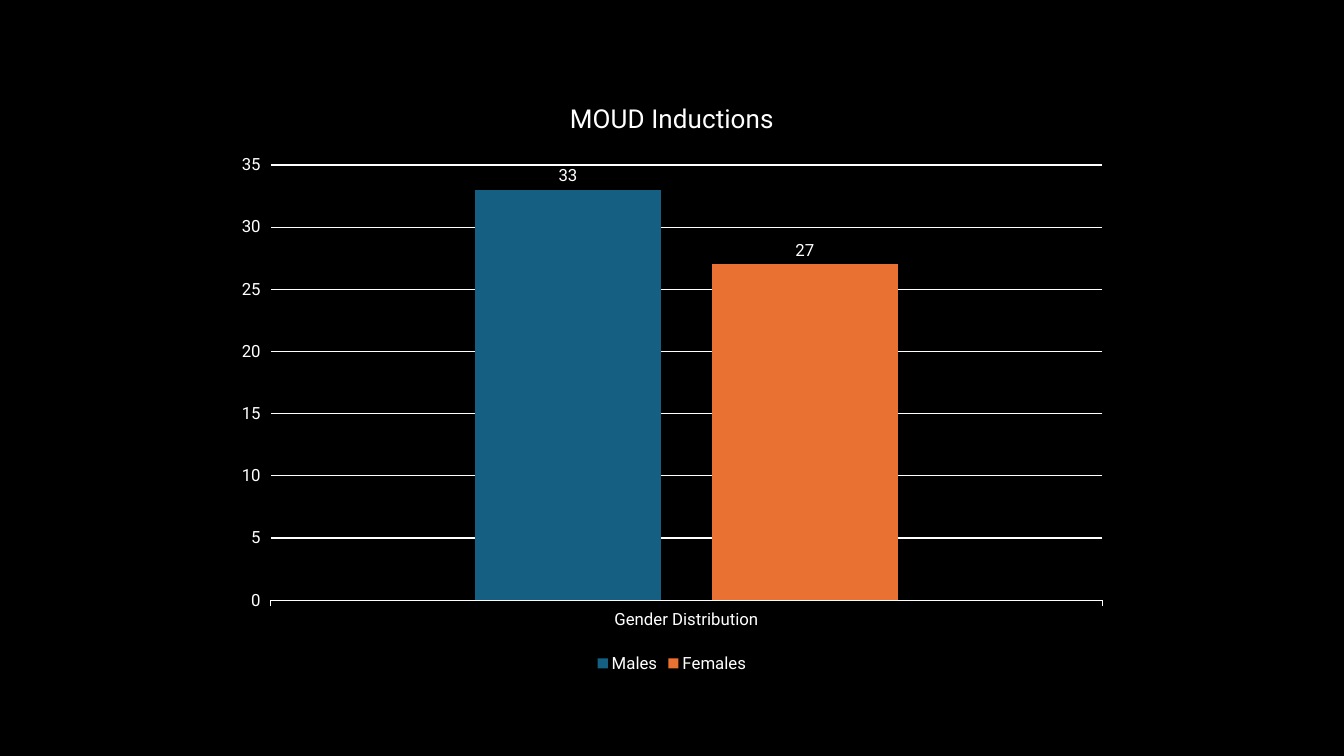
from typing import NamedTuple

from pptx import Presentation
from pptx.chart.chart import Chart
from pptx.chart.data import CategoryChartData
from pptx.dml.color import RGBColor
from pptx.enum.chart import XL_CHART_TYPE as Kind
from pptx.enum.chart import XL_LABEL_POSITION as LabelPos
from pptx.enum.chart import XL_LEGEND_POSITION as LegendPos
from pptx.enum.chart import XL_TICK_MARK as Tick
from pptx.slide import Slide
from pptx.text.text import Font
from pptx.util import Inches, Pt

BLACK = RGBColor(0x00, 0x00, 0x00)
WHITE = RGBColor(0xFF, 0xFF, 0xFF)
BLUE = RGBColor(0x15, 0x60, 0x82)
ORANGE = RGBColor(0xE9, 0x71, 0x32)


class Group(NamedTuple):
    name: str
    count: int
    color: RGBColor


GROUPS = [Group("Males", 33, BLUE), Group("Females", 27, ORANGE)]


def set_font(font: Font, size: float = 12) -> None:
    font.name = "Roboto"
    font.size = Pt(size)
    font.bold = False
    font.color.rgb = WHITE


def add_chart(slide: Slide) -> Chart:
    data = CategoryChartData()
    data.categories = ["Gender Distribution"]
    for group in GROUPS:
        data.add_series(group.name, [group.count])
    frame = slide.shapes.add_chart(
        Kind.COLUMN_CLUSTERED,
        Inches(2.22), Inches(0.79), Inches(8.89), Inches(5.93), data,
    )
    return frame.chart


def style_frame(chart: Chart) -> None:
    """Format the title and the legend."""
    set_font(chart.font, 10)
    chart.has_title = True
    title = chart.chart_title
    title.include_in_layout = False
    para = title.text_frame.paragraphs[0]
    para.text = "MOUD Inductions"
    set_font(para.font, 18.6)
    chart.has_legend = True
    chart.legend.position = LegendPos.BOTTOM
    chart.legend.include_in_layout = False
    set_font(chart.legend.font)


def style_axes(chart: Chart) -> None:
    cat, val = chart.category_axis, chart.value_axis
    for axis in (cat, val):
        axis.major_tick_mark = Tick.OUTSIDE
        axis.minor_tick_mark = Tick.NONE
        set_font(axis.tick_labels.font)
    val.minimum_scale, val.maximum_scale, val.major_unit = 0, 35, 5
    val.format.line.fill.background()
    for line in (cat.format.line, val.major_gridlines.format.line):
        line.color.rgb = WHITE
        line.width = Pt(0.75)


def style_bars(chart: Chart) -> None:
    plot = chart.plots[0]
    plot.vary_by_categories = False
    plot.gap_width = 219
    plot.overlap = -27
    for series, group in zip(plot.series, GROUPS):
        series.format.fill.solid()
        series.format.fill.fore_color.rgb = group.color
        labels = series.data_labels
        labels.show_value = True
        labels.position = LabelPos.OUTSIDE_END
        set_font(labels.font)


def main() -> None:
    deck = Presentation()
    deck.slide_width, deck.slide_height = Inches(13.33), Inches(7.5)
    slide = deck.slides.add_slide(deck.slide_layouts[6])
    slide.background.fill.solid()
    slide.background.fill.fore_color.rgb = BLACK
    chart = add_chart(slide)
    style_frame(chart)
    style_axes(chart)
    style_bars(chart)
    deck.save("out.pptx")


if __name__ == "__main__":
    main()
